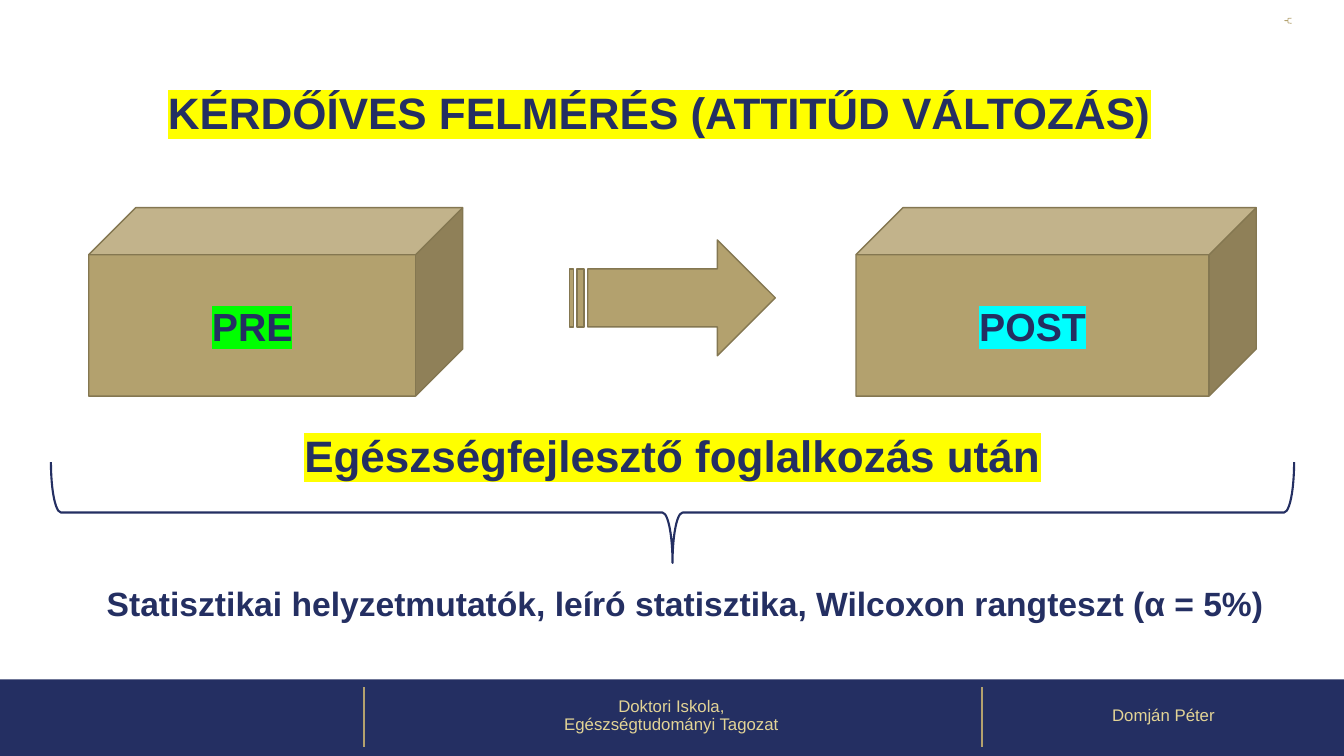
from lxml.etree import SubElement
from pptx import Presentation
from pptx.dml.color import RGBColor
from pptx.enum.shapes import MSO_CONNECTOR, MSO_SHAPE
from pptx.enum.text import MSO_ANCHOR, MSO_AUTO_SIZE, PP_ALIGN
from pptx.oxml.ns import qn
from pptx.util import Inches, Pt

HUES = {
    "navy": "242F62", "gold": "B3A16E", "edge": "847751", "cream": "E3D496",
    "yellow": "FFFF00", "green": "00FF00", "cyan": "00FFFF",
}


def hue(name):
    return RGBColor.from_string(HUES[name])


def write(shape, text, size, color="navy", bold=True, mark=None, space=None,
          align=PP_ALIGN.CENTER, anchor=MSO_ANCHOR.MIDDLE, wrap=True,
          fit=MSO_AUTO_SIZE.NONE):
    """Fill a shape with one paragraph per line; mark is the highlight colour."""
    frame = shape.text_frame
    frame.text = text
    frame.word_wrap = wrap
    frame.auto_size = fit
    frame.vertical_anchor = anchor
    for para in frame.paragraphs:
        para.alignment = align
        para.space_before = Pt(0)
        if space:
            para.line_spacing = space
        font = para.runs[0].font
        font.size, font.bold = Pt(size), bold
        font.color.rgb = hue(color)
        if mark:
            props = para.runs[0]._r.get_or_add_rPr()
            light = SubElement(props, qn("a:highlight"))
            SubElement(light, qn("a:srgbClr"), val=HUES[mark])
        font.name = "Arial"


deck = Presentation()
deck.slide_width, deck.slide_height = Inches(13.33), Inches(7.5)
slide = deck.slides.add_slide(deck.slide_layouts[5])
shapes = slide.shapes

# Title and caption
title = shapes.title
title.left, title.top = Inches(0.79), Inches(0.94)
title.width, title.height = Inches(11.5), Inches(0.47)
after = shapes.add_textbox(Inches(0.92), Inches(4.35), Inches(11.5), Inches(0.47))
for box, text in (
    (title, "KÉRDŐÍVES FELMÉRÉS (ATTITŰD VÁLTOZÁS)"),
    (after, "Egészségfejlesztő foglalkozás után"),
):
    write(box, text, 31.4, mark="yellow", space=0.7, anchor=MSO_ANCHOR.TOP)

# Footer
band = shapes.add_shape(MSO_SHAPE.RECTANGLE, 0, Inches(6.74), Inches(13.33), Inches(0.79))
band.shadow.inherit = False
band.fill.solid()
band.fill.fore_color.rgb = hue("navy")
band.line.fill.background()

for x in (3.61, 9.74):
    rule = shapes.add_connector(
        MSO_CONNECTOR.STRAIGHT, Inches(x), Inches(6.82), Inches(x), Inches(7.41))
    rule.line.color.rgb = hue("gold")
    rule.line.width = Pt(1.5)
    SubElement(rule._element.spPr, qn("a:effectLst"))

for x, width, text in (
    (3.59, 6.14, "Doktori Iskola,\nEgészségtudományi Tagozat"),
    (9.74, 3.6, "Domján Péter"),
):
    box = shapes.add_textbox(Inches(x), Inches(6.71), Inches(width), Inches(0.79))
    write(box, text, 12, color="cream", bold=False, space=0.9)

# Survey before and after
for kind, x, y, width, height, text, mark in (
    (MSO_SHAPE.CUBE, 0.88, 2.06, 3.71, 1.87, "PRE", "green"),
    (MSO_SHAPE.CUBE, 8.49, 2.06, 3.97, 1.87, "POST", "cyan"),
    (MSO_SHAPE.STRIPED_RIGHT_ARROW, 5.65, 2.38, 2.04, 1.15, None, None),
):
    block = shapes.add_shape(kind, Inches(x), Inches(y), Inches(width), Inches(height))
    block.shadow.inherit = False
    block.fill.solid()
    block.fill.fore_color.rgb = hue("gold")
    block.line.color.rgb = hue("edge")
    block.line.width = Pt(1)
    if text:
        write(block, text, 28, mark=mark)

# Braces
for kind, x, y, width, height, color, weight, turn, curl in (
    (MSO_SHAPE.LEFT_BRACE, 12.74, 0.18, 0.07, 0.05, "gold", 0.5, 0, 0.08),
    (MSO_SHAPE.RIGHT_BRACE, 6.17, -1.08, 1, 12.33, "navy", 1.5, 90, 0.1),
):
    brace = shapes.add_shape(kind, Inches(x), Inches(y), Inches(width), Inches(height))
    brace.shadow.inherit = False
    brace.fill.background()
    brace.line.color.rgb = hue(color)
    brace.line.width = Pt(weight)
    brace.rotation = turn
    brace.adjustments[0] = curl

# Methods
stats = shapes.add_textbox(Inches(0.96), Inches(5.73), Inches(11.78), Inches(0.5))
write(stats, "Statisztikai helyzetmutatók, leíró statisztika, Wilcoxon rangteszt (α = 5%)",
      24, align=PP_ALIGN.LEFT, anchor=MSO_ANCHOR.TOP, wrap=False,
      fit=MSO_AUTO_SIZE.SHAPE_TO_FIT_TEXT)

deck.save("out.pptx")
